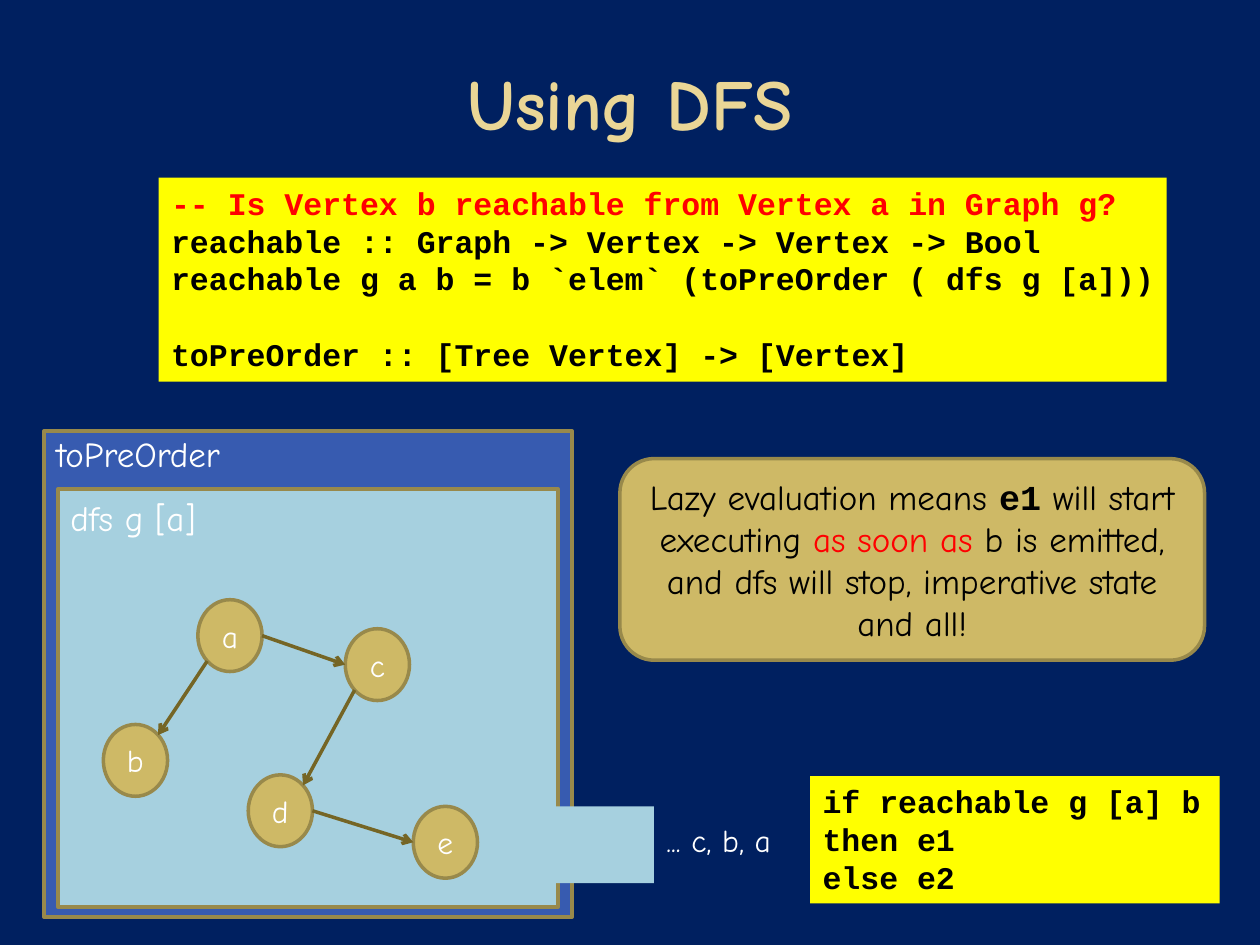
from math import cos, pi, sin

from lxml import etree
from pptx import Presentation
from pptx.dml.color import RGBColor
from pptx.enum.shapes import MSO_CONNECTOR, MSO_SHAPE as Preset
from pptx.enum.text import MSO_ANCHOR as Anchor, PP_ALIGN as Align
from pptx.oxml.ns import qn
from pptx.util import Inches, Pt

COLORS = {
    "background": "002060", "title": "EAD696", "code": "FFFF00",
    "outer": "375BB0", "inner": "A6D0DF", "gold": "CEB966",
    "border": "98894B", "arrow": "756525",
    "red": "FF0000", "black": "000000", "white": "FFFFFF",
}
HAND, MONO = "Comic Neue", "Courier New"
CODE = {"name": MONO, "size": Pt(18), "bold": True}
LABEL = {"name": HAND, "size": Pt(20)}
SMALL = {"name": HAND, "size": Pt(18)}

NODE_W, NODE_H = 0.51, 0.57
NODES = {"a": (1.57, 4.76), "b": (0.82, 5.75), "c": (2.74, 4.99),
         "d": (1.97, 6.15), "e": (3.28, 6.4)}
# Angles in degrees, clockwise from the right side of a node
EDGES = [("a", 135, "b", 315), ("a", 0, "c", 180),
         ("c", 135, "d", 315), ("d", 0, "e", 180)]


def rgb(color):
    return RGBColor.from_string(COLORS[color])


def add_run(paragraph, text, color, style):
    run = paragraph.add_run()
    run.text = text
    for attribute, value in style.items():
        setattr(run.font, attribute, value)
    run.font.color.rgb = rgb(color)


def write(shape, paragraphs, align=Align.LEFT, **frame_format):
    """Fill a shape with paragraphs, each a list of (text, color, style)."""
    frame = shape.text_frame
    settings = {"word_wrap": True, "vertical_anchor": Anchor.TOP, **frame_format}
    for attribute, value in settings.items():
        setattr(frame, attribute, value)
    for index, runs in enumerate(paragraphs):
        paragraph = frame.add_paragraph() if index else frame.paragraphs[0]
        paragraph.alignment = align
        for run in runs:
            add_run(paragraph, *run)


def add_panel(slide, box, fill, border=True, preset=Preset.RECTANGLE):
    panel = slide.shapes.add_shape(preset, *map(Inches, box))
    panel.shadow.inherit = False
    panel.fill.solid()
    panel.fill.fore_color.rgb = rgb(fill)
    if border:
        panel.line.color.rgb = rgb("border")
        panel.line.width = Pt(2)
    else:
        panel.line.fill.background()
    return panel


def add_label(slide, box, text, style, color="white", **layout):
    label = slide.shapes.add_textbox(*map(Inches, box))
    write(label, [[(text, color, style)]], **layout)


def add_code(slide, box, lines):
    """Yellow code block; lines are (text, color) pairs."""
    block = add_panel(slide, box, "code", border=False)
    write(block, [[(text, color, CODE)] for text, color in lines], margin_right=0)
    return block


def add_node(slide, name):
    node = add_panel(slide, (*NODES[name], NODE_W, NODE_H), "gold", preset=Preset.OVAL)
    write(node, [[(name, "white", SMALL)]], Align.CENTER,
          vertical_anchor=Anchor.MIDDLE, margin_left=0, margin_right=0)


def rim_point(name, degrees):
    """Point on the rim of a node at the given angle."""
    left, top = NODES[name]
    angle = degrees * pi / 180
    return (Inches(left + NODE_W / 2 * (1 + cos(angle))),
            Inches(top + NODE_H / 2 * (1 + sin(angle))))


def add_edge(slide, source, leave, target, enter):
    edge = slide.shapes.add_connector(
        MSO_CONNECTOR.STRAIGHT, *rim_point(source, leave), *rim_point(target, enter))
    edge.line.color.rgb = rgb("arrow")
    edge.line.width = Pt(2)
    etree.SubElement(edge.line._get_or_add_ln(), qn("a:tailEnd"), type="arrow")
    etree.SubElement(edge._element.spPr, qn("a:effectLst"))


def add_traversal(slide):
    add_panel(slide, (0.35, 3.42, 4.19, 3.86), "outer")
    add_label(slide, (0.35, 3.38, 1.64, 0.44), "toPreOrder", LABEL)
    add_panel(slide, (0.46, 3.88, 3.97, 3.32), "inner")
    add_label(slide, (0.46, 3.89, 1.64, 0.44), "dfs g [a]", LABEL)
    for name in NODES:
        add_node(slide, name)
    for edge in EDGES:
        add_edge(slide, *edge)
    add_panel(slide, (4.01, 6.4, 1.18, 0.61), "inner", border=False)
    add_label(slide, (5.19, 6.47, 1.16, 0.4), "... c, b, a", SMALL, word_wrap=False)


def add_callout(slide):
    callout = add_panel(slide, (4.92, 3.64, 4.64, 1.6), "gold",
                        preset=Preset.ROUNDED_RECTANGULAR_CALLOUT)
    for index, value in enumerate((-0.24, 0.5, 0.17)):
        callout.adjustments[index] = value
    write(callout, [[
        ("Lazy evaluation means ", "black", LABEL),
        ("e1", "black", {**CODE, "size": Pt(20)}),
        (" will start executing ", "black", LABEL),
        ("as soon as ", "red", LABEL),
        ("b is emitted, and dfs will stop, imperative state and all!", "black", LABEL),
    ]], Align.CENTER, vertical_anchor=Anchor.MIDDLE)


def main():
    deck = Presentation()
    deck.slide_width, deck.slide_height = Inches(10), Inches(7.5)
    slide = deck.slides.add_slide(deck.slide_layouts[6])
    slide.background.fill.solid()
    slide.background.fill.fore_color.rgb = rgb("background")

    add_label(slide, (0.5, 0.3, 9, 1.02), "Using DFS",
              {"name": HAND, "size": Pt(41), "bold": True}, "title",
              align=Align.CENTER, vertical_anchor=Anchor.MIDDLE)
    definition = add_code(slide, (1.26, 1.41, 8, 1.62), [
        ("-- Is Vertex b reachable from Vertex a in Graph g?", "red"),
        ("reachable :: Graph -> Vertex -> Vertex -> Bool", "black"),
        ("reachable g a b = b `elem` (toPreOrder ( dfs g [a]))", "black"),
        ("toPreOrder :: [Tree Vertex] -> [Vertex]", "black"),
    ])
    definition.text_frame.paragraphs[-1].space_before = Pt(21.5)
    add_traversal(slide)
    add_code(slide, (6.43, 6.16, 3.25, 1.01), [
        (line, "black") for line in ("if reachable g [a] b", "then e1", "else e2")])
    add_callout(slide)
    deck.save("out.pptx")


if __name__ == "__main__":
    main()
